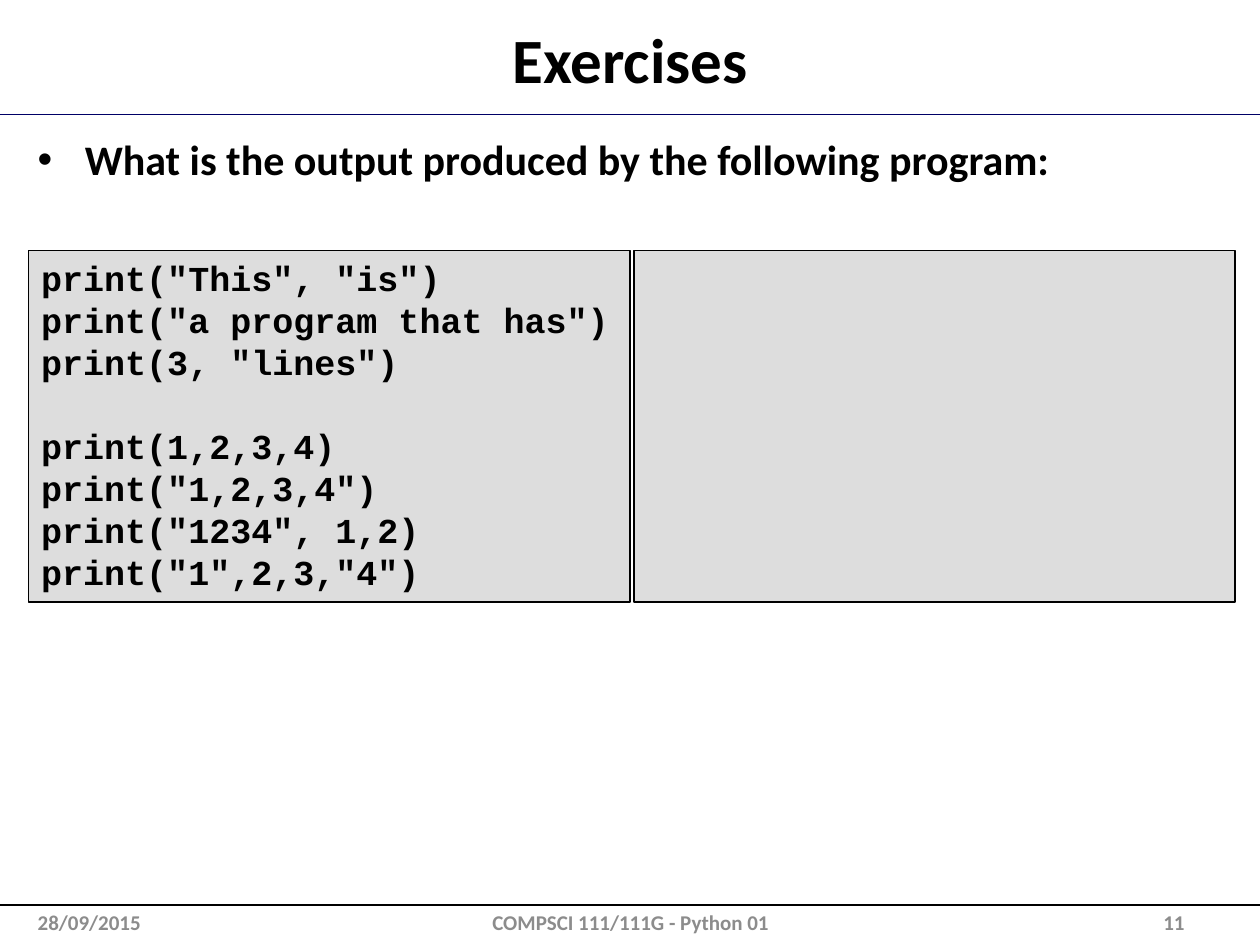
import pptx
import pptx.util
import pptx.dml.color
import pptx.enum.shapes
import pptx.enum.text
import lxml.etree
from pptx.util import Cm, Pt

ANCHOR = pptx.enum.text.MSO_ANCHOR
ALIGN = pptx.enum.text.PP_ALIGN
SLIDE_WIDTH = 25.4
PANEL_TOP, PANEL_WIDTH, PANEL_HEIGHT = 5.05, 12.12, 7.09
FOOTER_TOP, FOOTER_HEIGHT = 18.24, 0.69
CODE = [
    'print("This", "is")',
    'print("a program that has")',
    'print(3, "lines")',
    'print(1,2,3,4)',
    'print("1,2,3,4")',
    'print("1234", 1,2)',
    'print("1",2,3,"4")',
]
SECOND_GROUP_START = 3
CODE_LINE_HEIGHT = Pt(24)


def color(hex_value):
    return pptx.dml.color.RGBColor.from_string(hex_value)


def format_paragraph(paragraph, size, font_name="Calibri", hex_value="000000", align=ALIGN.LEFT):
    paragraph.alignment = align
    paragraph.font.size = Pt(size)
    paragraph.font.name = font_name
    paragraph.font.bold = True
    paragraph.font.color.rgb = color(hex_value)


def add_rule(slide, y, hex_value):
    rule = slide.shapes.add_connector(
        pptx.enum.shapes.MSO_CONNECTOR.STRAIGHT, Cm(0), Cm(y), Cm(SLIDE_WIDTH), Cm(y))
    rule.line.color.rgb = color(hex_value)
    rule.line.width = Pt(1)
    lxml.etree.SubElement(rule.element.spPr, pptx.oxml.ns.qn("a:effectLst"))


def set_title(slide, text):
    title = slide.shapes.title
    title.left, title.top, title.width, title.height = Cm(0.25), Cm(0.3), Cm(24.9), Cm(1.75)
    title.text_frame.text = text
    title.text_frame.vertical_anchor = ANCHOR.MIDDLE
    format_paragraph(title.text_frame.paragraphs[0], 36, align=ALIGN.CENTER)


def add_text(slide, text, left, top, width, height):
    box = slide.shapes.add_textbox(Cm(left), Cm(top), Cm(width), Cm(height))
    box.text_frame.word_wrap = True
    box.text_frame.text = text
    return box.text_frame


def add_question(slide, text):
    question = add_text(slide, text, 0.51, 2.57, 24.38, 15.19).paragraphs[0]
    format_paragraph(question, 24)
    properties = question._p.get_or_add_pPr()
    properties.set("marL", str(Cm(0.95)))
    properties.set("indent", str(-Cm(0.95)))
    bullet_font = lxml.etree.SubElement(properties, pptx.oxml.ns.qn("a:buFont"))
    bullet_font.set("typeface", "Arial")
    bullet = lxml.etree.SubElement(properties, pptx.oxml.ns.qn("a:buChar"))
    bullet.set("char", "•")
    properties.append(properties.find(pptx.oxml.ns.qn("a:defRPr")))


def add_panel(slide, left):
    panel = slide.shapes.add_shape(
        pptx.enum.shapes.MSO_SHAPE.RECTANGLE,
        Cm(left), Cm(PANEL_TOP), Cm(PANEL_WIDTH), Cm(PANEL_HEIGHT))
    panel.shadow.inherit = False
    panel.fill.solid()
    panel.fill.fore_color.rgb = color("DDDDDD")
    panel.line.color.rgb = color("000000")
    panel.line.width = Pt(0.75)
    return panel


def fill_code(panel, lines):
    frame = panel.text_frame
    frame.word_wrap = True
    frame.vertical_anchor = ANCHOR.TOP
    frame.text = "\n".join(lines)
    for paragraph in frame.paragraphs:
        format_paragraph(paragraph, 20, "Courier New")
        paragraph.line_spacing = CODE_LINE_HEIGHT
    frame.paragraphs[SECOND_GROUP_START].space_before = CODE_LINE_HEIGHT


def add_footer(slide, text, left, width, align):
    frame = add_text(slide, text, left, FOOTER_TOP, width, FOOTER_HEIGHT)
    frame.vertical_anchor = ANCHOR.MIDDLE
    format_paragraph(frame.paragraphs[0], 12, hex_value="8C8C8C", align=align)


def main():
    presentation = pptx.Presentation()
    presentation.slide_width = Cm(SLIDE_WIDTH)
    presentation.slide_height = Cm(19.05)
    slide = presentation.slides.add_slide(presentation.slide_layouts.get_by_name("Title Only"))

    add_rule(slide, 2.31, "000066")
    add_rule(slide, FOOTER_TOP, "000000")
    set_title(slide, "Exercises")
    add_question(slide, "What is the output produced by the following program:")
    fill_code(add_panel(slide, 0.58), CODE)
    add_panel(slide, 12.78)
    add_footer(slide, "28/09/2015", 0.51, 5.92, ALIGN.LEFT)
    add_footer(slide, "COMPSCI 111/111G - Python 01", 8.69, 8.05, ALIGN.CENTER)
    add_footer(slide, "11", 18.21, 5.92, ALIGN.RIGHT)
    presentation.save("out.pptx")


if __name__ == "__main__":
    main()
